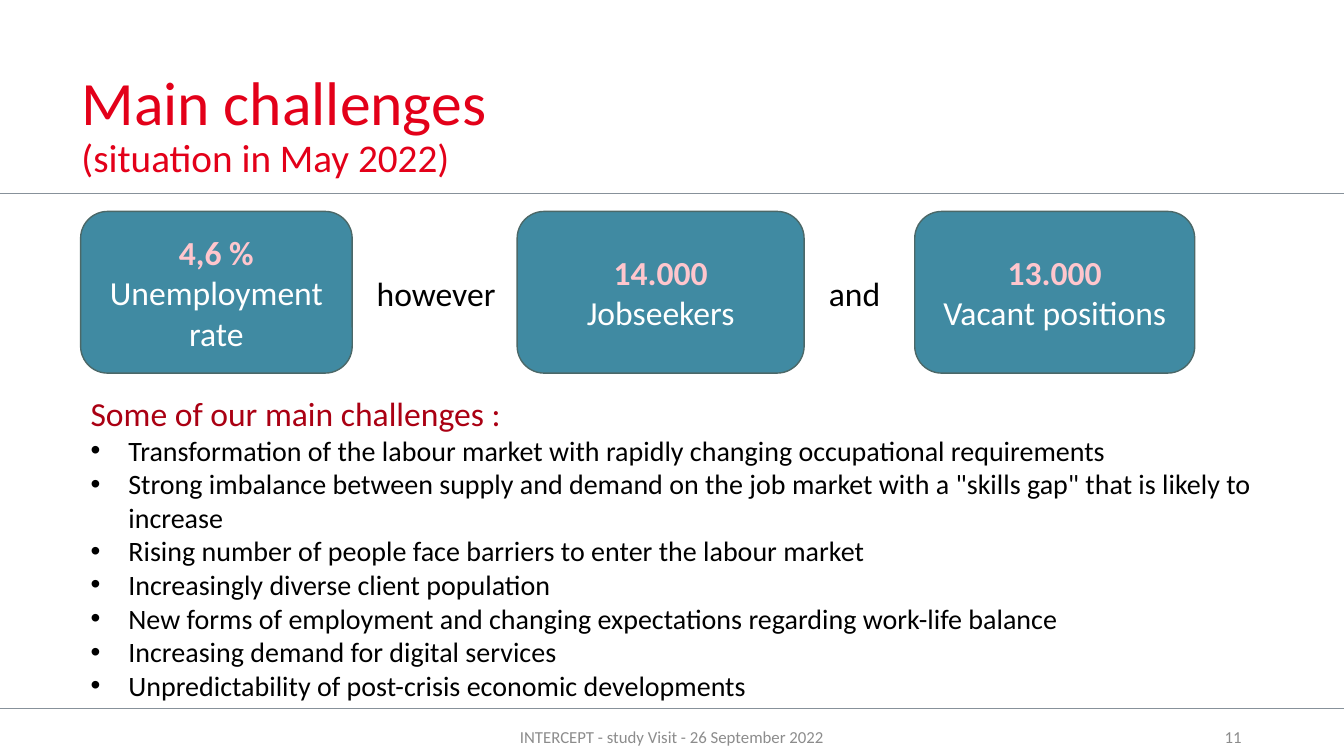
from lxml.etree import SubElement as Sub
from pptx import Presentation
from pptx.dml.color import RGBColor
from pptx.enum.shapes import MSO_CONNECTOR as Link, MSO_SHAPE as Shape
from pptx.enum.text import MSO_ANCHOR as Anchor, MSO_AUTO_SIZE as Fit, PP_ALIGN as Align
from pptx.oxml.ns import qn
from pptx.util import Pt

rgb = RGBColor.from_string
RED, DARK, TEAL, PINK = "E30019", "AA0013", "006483", "FFC6CD"
RULE, EDGE, GREY, BLACK, WHITE = "87919A", "4B6868", "8C8C8C", "000000", "FFFFFF"


def write(para, text, size, color, bold=False):
    run = para.add_run()
    run.text = text
    font = run.font
    font.name, font.size, font.bold = "Calibri", Pt(size), bold
    font.color.rgb = rgb(color)


def add_box(left, top, width, height, anchor=Anchor.TOP):
    box = slide.shapes.add_textbox(Pt(left), Pt(top), Pt(width), Pt(height))
    frame = box.text_frame
    frame.word_wrap = True
    frame.vertical_anchor = anchor
    return frame


deck = Presentation()
deck.slide_width, deck.slide_height = Pt(960), Pt(540)
slide = deck.slides.add_slide(deck.slide_layouts[5])

# Title
title = slide.shapes.title
title.left, title.top, title.width, title.height = Pt(51), Pt(29), Pt(838), Pt(104)
frame = title.text_frame
frame.auto_size = Fit.NONE
frame.word_wrap = True
frame.vertical_anchor = Anchor.BOTTOM
para = frame.paragraphs[0]
para.alignment = Align.LEFT
para.line_spacing = 0.9
write(para, "Main challenges", 44, RED)
para.add_line_break()
write(para, "(situation in May 2022)", 28, RED)

# Rules above and below the content
for y in (138, 506):
    line = slide.shapes.add_connector(Link.STRAIGHT, Pt(0), Pt(y), Pt(960), Pt(y))
    line.line.color.rgb = rgb(RULE)
    line.line.width = Pt(0.5)
    Sub(line._element.spPr, qn("a:effectLst"))

# Key figures
facts = [
    (57.6, 194, "4,6 %", "Unemployment rate"),
    (369.4, 205, "14.000", "Jobseekers"),
    (653.4, 200, "13.000", "Vacant positions"),
]
for left, width, value, label in facts:
    card = slide.shapes.add_shape(
        Shape.ROUNDED_RECTANGLE, Pt(left), Pt(151), Pt(width), Pt(115.5))
    card.shadow.inherit = False
    card.fill.solid()
    card.fill.fore_color.rgb = rgb(TEAL)
    tint = card._element.spPr.find(qn("a:solidFill"))[0]
    Sub(tint, qn("a:alpha"), val="75000")
    card.line.color.rgb = rgb(EDGE)
    card.line.width = Pt(1)
    frame = card.text_frame
    frame.word_wrap = True
    frame.vertical_anchor = Anchor.MIDDLE
    top, low = frame.paragraphs[0], frame.add_paragraph()
    top.alignment = low.alignment = Align.CENTER
    write(top, value, 24, PINK, True)
    write(low, label, 24, WHITE)

for left, width, word in ((262, 101, "however"), (585, 62, "and")):
    frame = add_box(left, 191.5, width, 36)
    write(frame.paragraphs[0], word, 24, BLACK)

# Challenges
points = [
    "Transformation of the labour market with rapidly changing occupational requirements",
    'Strong imbalance between supply and demand on the job market with a "skills gap" '
    "that is likely to increase",
    "Rising number of people face barriers to enter the labour market",
    "Increasingly diverse client population",
    "New forms of employment and changing expectations regarding work-life balance",
    "Increasing demand for digital services",
    "Unpredictability of post-crisis economic developments",
]
frame = add_box(57.6, 277, 849, 230)
write(frame.paragraphs[0], "Some of our main challenges :", 24, DARK)
for point in points:
    para = frame.add_paragraph()
    props = para._p.get_or_add_pPr()
    props.set("marL", str(Pt(27)))
    props.set("indent", str(-Pt(27)))
    Sub(props, qn("a:buFont"), typeface="Arial")
    Sub(props, qn("a:buChar"), char="•")
    write(para, point, 20, BLACK)

# Footer
notes = [
    (318, 324, Align.CENTER, "INTERCEPT - study Visit - 26 September 2022"),
    (678, 216, Align.RIGHT, "11"),
]
for left, width, align, text in notes:
    para = add_box(left, 512, width, 29, Anchor.MIDDLE).paragraphs[0]
    para.alignment = align
    write(para, text, 12, GREY)

deck.save("out.pptx")
